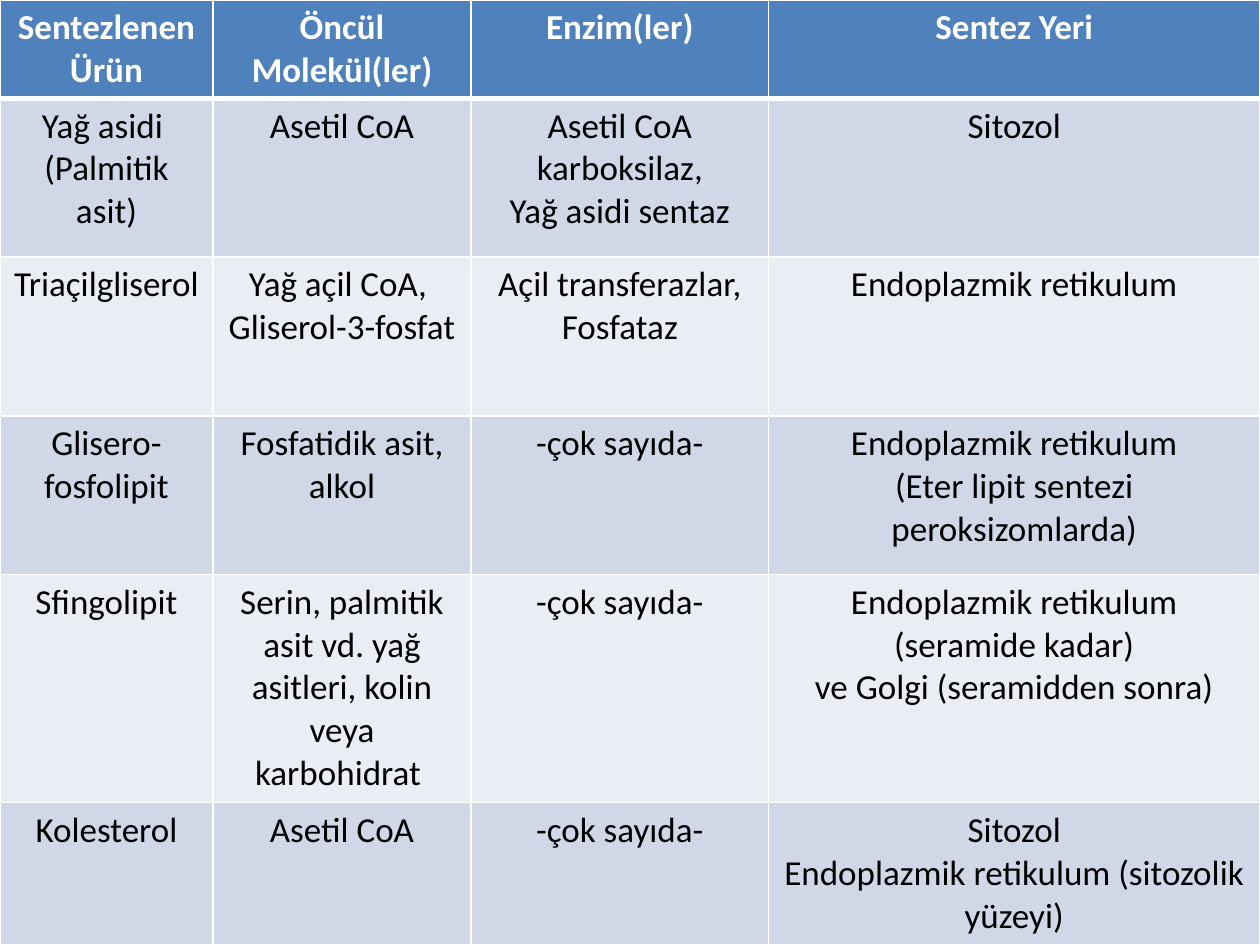
from lxml.etree import SubElement
from pptx import Presentation
from pptx.dml.color import RGBColor
from pptx.enum.text import PP_ALIGN
from pptx.oxml.ns import qn
from pptx.util import Inches, Pt

COLS = [1.69, 2.05, 2.36, 3.9]
ROW_HEIGHTS = [0.78, 1.26, 1.26, 1.26, 1.81, 1.13]
HEADER_FILL, BANDS = "4F81BD", ["E9EDF4", "D0D8E8"]

# A line break inside a cell starts a new paragraph
ROWS = [
    ["Sentezlenen Ürün", "Öncül Molekül(ler)", "Enzim(ler)", "Sentez Yeri"],
    ["Yağ asidi \n(Palmitik asit)", "Asetil CoA",
     "Asetil CoA karboksilaz,\nYağ asidi sentaz", "Sitozol"],
    ["Triaçilgliserol", "Yağ açil CoA, \nGliserol-3-fosfat",
     "Açil transferazlar,\nFosfataz", "Endoplazmik retikulum"],
    ["Glisero-\nfosfolipit", "Fosfatidik asit, alkol", "-çok sayıda-",
     "Endoplazmik retikulum\n(Eter lipit sentezi peroksizomlarda)"],
    ["Sfingolipit",
     "Serin, palmitik asit vd. yağ asitleri, kolin veya karbohidrat ",
     "-çok sayıda-",
     "Endoplazmik retikulum (seramide kadar)\nve Golgi (seramidden sonra)"],
    ["Kolesterol", "Asetil CoA", "-çok sayıda-",
     "Sitozol\nEndoplazmik retikulum (sitozolik yüzeyi)"],
]


def rgb(color):
    return RGBColor.from_string(color)


def set_borders(cell, color, **widths):
    """Draw the cell's edges; widths are in points, keyed by L, R, T, B."""
    tcPr = cell._tc.get_or_add_tcPr()
    for side, width in widths.items():
        ln = SubElement(tcPr, qn(f"a:ln{side}"), w=str(Pt(width)))
        fill = SubElement(ln, qn("a:solidFill"))
        SubElement(fill, qn("a:srgbClr"), val=color)


def format_cell(cell, text, row):
    header = row == 0
    # The rule below the header is thicker
    set_borders(cell, "FFFFFF", L=1, R=1, T=3 if row == 1 else 1, B=3 if header else 1)
    cell.fill.solid()
    cell.fill.fore_color.rgb = rgb(HEADER_FILL if header else BANDS[row % 2])
    cell.text = text
    for p in cell.text_frame.paragraphs:
        p.alignment = PP_ALIGN.CENTER
        p.font.name = "Calibri"
        p.font.size = Pt(20)
        p.font.bold = header
        p.font.color.rgb = rgb("FFFFFF" if header else "000000")


def add_synthesis_table(s, left, top, width, height):
    table = s.shapes.add_table(len(ROWS), len(COLS), Inches(left), Inches(top),
                               Inches(width), Inches(height)).table
    # Share the box out in proportion to the column widths and row heights
    for col, w in zip(table.columns, COLS):
        col.width = Inches(width * w / sum(COLS))
    for row, h in zip(table.rows, ROW_HEIGHTS):
        row.height = Inches(height * h / sum(ROW_HEIGHTS))
    for i, texts in enumerate(ROWS):
        for j, text in enumerate(texts):
            format_cell(table.cell(i, j), text, i)


def main():
    prs = Presentation()
    prs.slide_width, prs.slide_height = Inches(10), Inches(7.5)
    s = prs.slides.add_slide(prs.slide_layouts[6])
    add_synthesis_table(s, 0, 0, 10, 7.5)
    prs.save("out.pptx")


if __name__ == "__main__":
    main()
